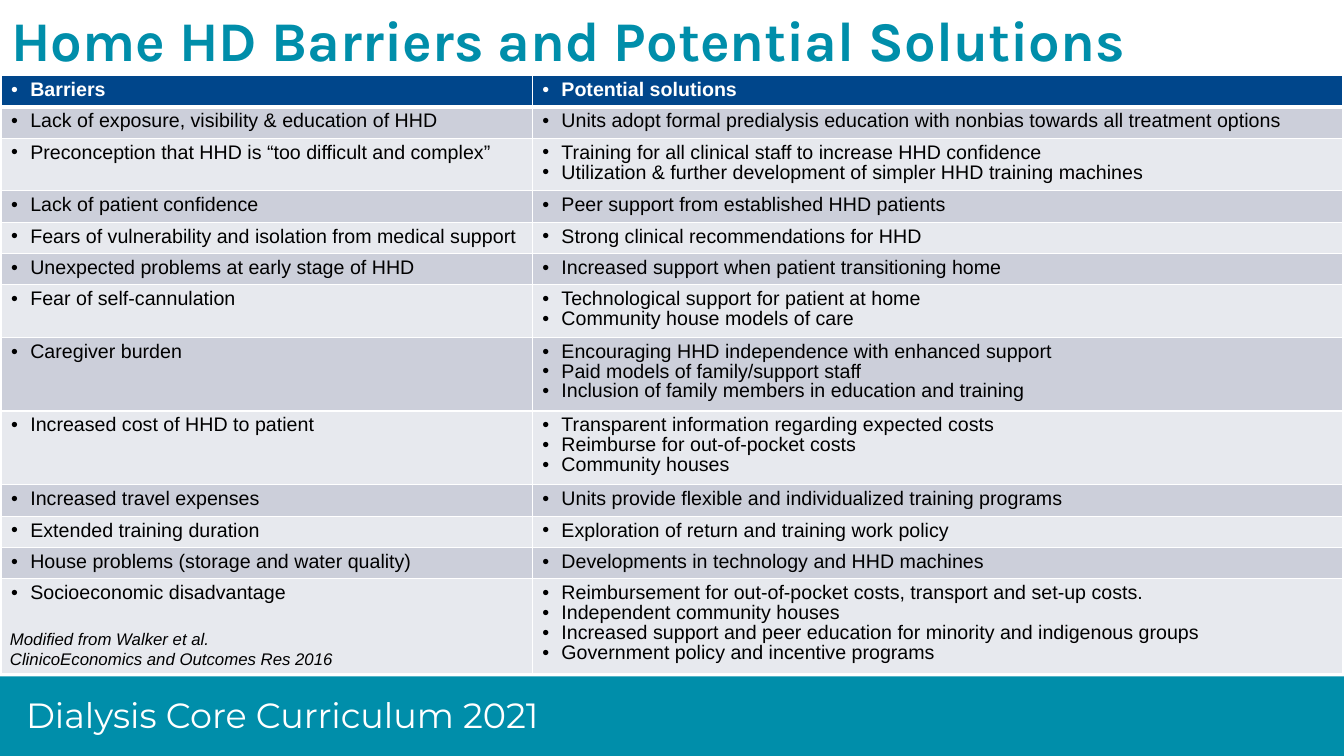
from dataclasses import dataclass

from lxml import etree
from pptx import Presentation
from pptx.dml.color import RGBColor
from pptx.enum.shapes import MSO_SHAPE
from pptx.enum.text import MSO_ANCHOR, PP_ALIGN
from pptx.oxml.ns import qn
from pptx.util import Inches, Pt

RECT = MSO_SHAPE.RECTANGLE
TOP = MSO_ANCHOR.TOP
LEFT = PP_ALIGN.LEFT

WIDE, HIGH = Inches(13.33), Inches(7.5)
HUES = {
    "teal": "008EAA", "navy": "00468B", "white": "FFFFFF",
    "black": "000000", "dark": "CCCFDA", "light": "E7E9EE",
}
COLS = (39.52, 60.28)      # column widths, percent of slide width
LINE, PAD = 2.8, 1.35      # text line and cell padding, percent of slide height
HANG = Inches(0.19)


@dataclass
class Box:
    """Place in percent of the slide's width and height."""
    left: float
    top: float
    width: float
    height: float

    def emu(self) -> tuple[int, int, int, int]:
        return (across(self.left), down(self.top),
                across(self.width), down(self.height))


@dataclass
class Style:
    size: float
    face: str
    hue: str
    bold: bool = False
    slant: bool = False


@dataclass
class Row:
    barrier: str
    fixes: tuple[str, ...]


ROWS = (
    Row("Barriers", ("Potential solutions",)),
    Row("Lack of exposure, visibility & education of HHD",
        ("Units adopt formal predialysis education with nonbias towards all treatment options",)),
    Row("Preconception that HHD is “too difficult and complex”",
        ("Training for all clinical staff to increase HHD confidence",
         "Utilization & further development of simpler HHD training machines")),
    Row("Lack of patient confidence", ("Peer support from established HHD patients",)),
    Row("Fears of vulnerability and isolation from medical support",
        ("Strong clinical recommendations for HHD",)),
    Row("Unexpected problems at early stage of HHD",
        ("Increased support when patient transitioning home",)),
    Row("Fear of self-cannulation",
        ("Technological support for patient at home", "Community house models of care")),
    Row("Caregiver burden",
        ("Encouraging HHD independence with enhanced support",
         "Paid models of family/support staff",
         "Inclusion of family members in education and training")),
    Row("Increased cost of HHD to patient",
        ("Transparent information regarding expected costs",
         "Reimburse for out-of-pocket costs", "Community houses")),
    Row("Increased travel expenses",
        ("Units provide flexible and individualized training programs",)),
    Row("Extended training duration", ("Exploration of return and training work policy",)),
    Row("House problems (storage and water quality)",
        ("Developments in technology and HHD machines",)),
    Row("Socioeconomic disadvantage",
        ("Reimbursement for out-of-pocket costs, transport and set-up costs.",
         "Independent community houses",
         "Increased support and peer education for minority and indigenous groups",
         "Government policy and incentive programs")),
)


def across(share: float) -> int:
    return round(WIDE * share / 100)


def down(share: float) -> int:
    return round(HIGH * share / 100)


def color(name: str) -> RGBColor:
    return RGBColor.from_string(HUES[name])


def format_text(frame, style: Style) -> None:
    for para in frame.paragraphs:
        for run in para.runs:
            font = run.font
            font.size, font.name = Pt(style.size), style.face
            font.bold, font.italic = style.bold, style.slant
            font.color.rgb = color(style.hue)


def fill_frame(frame, text: str, style: Style) -> None:
    frame.word_wrap = True
    frame.vertical_anchor = TOP
    frame.text = text
    frame.paragraphs[0].alignment = LEFT
    format_text(frame, style)


def add_label(slide, box: Box, text: str, style: Style) -> None:
    fill_frame(slide.shapes.add_textbox(*box.emu()).text_frame, text, style)


def add_title(slide, box: Box, text: str, style: Style) -> None:
    title = slide.shapes.title
    title.left, title.top, title.width, title.height = box.emu()
    fill_frame(title.text_frame, text, style)


def add_bar(slide, box: Box, hue: str) -> None:
    bar = slide.shapes.add_shape(RECT, *box.emu())
    bar.shadow.inherit = False
    bar.fill.solid()
    bar.fill.fore_color.rgb = color(hue)
    bar.line.fill.background()


def set_edges(cell, base: float) -> None:
    props = cell._tc.get_or_add_tcPr()
    for side, width in (("L", 1), ("R", 1), ("T", 1), ("B", base)):
        edge = etree.SubElement(props, qn(f"a:ln{side}"), w=str(Pt(width)))
        fill = etree.SubElement(edge, qn("a:solidFill"))
        etree.SubElement(fill, qn("a:srgbClr"), val=HUES["white"])


def fill_cell(cell, lines: tuple[str, ...], hue: str, style: Style, base: float) -> None:
    set_edges(cell, base)
    cell.fill.solid()
    cell.fill.fore_color.rgb = color(hue)
    cell.text_frame.text = "\n".join(lines)
    for para in cell.text_frame.paragraphs:
        props = para._p.get_or_add_pPr()
        props.set("marL", str(HANG))
        props.set("indent", str(-HANG))
        etree.SubElement(props, qn("a:buFont"), typeface="Arial")
        etree.SubElement(props, qn("a:buChar"), char="•")
        para.line_spacing = 0.9
    format_text(cell.text_frame, style)


def add_grid(slide, left: float, top: float, rows: tuple[Row, ...]) -> None:
    highs = [PAD + LINE * len(row.fixes) for row in rows]
    box = Box(left, top, sum(COLS), sum(highs))
    table = slide.shapes.add_table(len(rows), len(COLS), *box.emu()).table
    for col, share in zip(table.columns, COLS):
        col.width = across(share)
    for num, (row, high) in enumerate(zip(rows, highs)):
        table.rows[num].height = down(high)
        head = num == 0
        hue = "navy" if head else ("light", "dark")[num % 2]
        style = Style(14, "Arial", "white" if head else "black", bold=head)
        for col, lines in enumerate(((row.barrier,), row.fixes)):
            fill_cell(table.cell(num, col), lines, hue, style, 3 if head else 1)


def main() -> None:
    deck = Presentation()
    deck.slide_width, deck.slide_height = WIDE, HIGH
    slide = deck.slides.add_slide(deck.slide_layouts[5])

    # Footer band
    add_bar(slide, Box(0, 89.47, 100, 10.53), "teal")

    # Barriers and solutions
    add_grid(slide, 0.08, 10, ROWS)

    # Title, source note and course name
    add_title(slide, Box(0.08, 0.05, 90.1, 10.27),
              "Home HD Barriers and Potential Solutions",
              Style(40, "Karla", "teal", bold=True))
    add_label(slide, Box(0, 82.53, 25.9, 6.67),
              "Modified from Walker et al. ClinicoEconomics and Outcomes Res 2016",
              Style(12, "Arial", "black", slant=True))
    add_label(slide, Box(1.2, 91.1, 76.2, 6.93), "Dialysis Core Curriculum 2021",
              Style(25, "Montserrat", "white"))

    deck.save("out.pptx")


if __name__ == "__main__":
    main()
